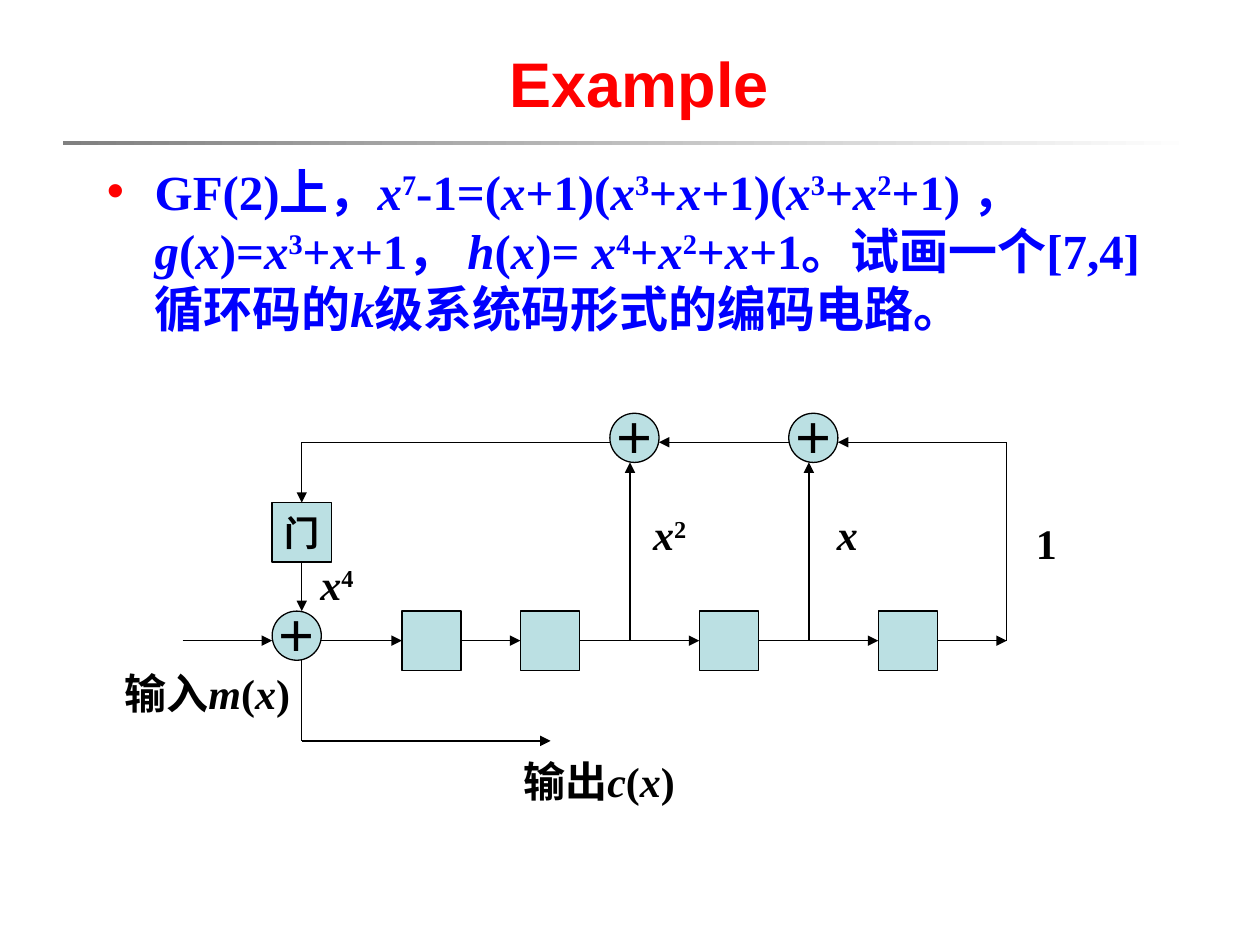
import dataclasses
import itertools

import lxml.etree
import pptx
import pptx.dml.color
import pptx.enum.shapes
import pptx.enum.text
import pptx.oxml.ns
import pptx.util

Inches = pptx.util.Inches
Pt = pptx.util.Pt
RGB = pptx.dml.color.RGBColor.from_string
qn = pptx.oxml.ns.qn
SHAPE = pptx.enum.shapes.MSO_SHAPE
ALIGN = pptx.enum.text.PP_ALIGN
ANCHOR = pptx.enum.text.MSO_ANCHOR
TOP, LEFT, BOTTOM, RIGHT = range(4)


@dataclasses.dataclass(frozen=True)
class Theme:
    accent: str = "FF0000"
    body: str = "0000FF"
    ink: str = "000000"
    block_fill: str = "BBE0E3"
    rule: tuple = ("808080", "FFFFFF")
    sans: str = "Arial"
    serif: str = "Times New Roman"
    title_size: int = 36
    body_size: int = 28
    label_size: int = 24
    gate_size: int = 20
    stroke: float = 0.75


def split_math(text):
    """Lower-case Latin letters are italic variables; ^ raises the next character."""
    marked = []
    for before, char in zip(" " + text, text):
        if char != "^":
            kind = "power" if before == "^" else "variable" if "a" <= char <= "z" else "plain"
            marked.append((kind, char))
    for kind, group in itertools.groupby(marked, key=lambda pair: pair[0]):
        yield kind, "".join(char for _, char in group)


class SlideBuilder:
    def __init__(self, slide, theme):
        self.slide, self.theme = slide, theme

    def style(self, font, size, color, face):
        font.size, font.bold, font.name = Pt(size), True, face
        font.color.rgb = RGB(color)

    def title(self, text, x, y, w, h):
        heading = self.slide.shapes.title
        heading.left, heading.top, heading.width, heading.height = map(Inches, (x, y, w, h))
        frame = heading.text_frame
        frame.text = text
        frame.vertical_anchor = ANCHOR.MIDDLE
        frame.paragraphs[0].alignment = ALIGN.CENTER
        self.style(frame.paragraphs[0].runs[0].font, self.theme.title_size,
                   self.theme.accent, self.theme.sans)

    def rule(self, x, y, w, h):
        bar = self.slide.shapes.add_shape(SHAPE.RECTANGLE, *map(Inches, (x, y, w, h)))
        bar.shadow.inherit = False
        bar.line.fill.background()
        bar.fill.gradient()
        bar.fill.gradient_angle = 0
        for stop, color, position in zip(bar.fill.gradient_stops, self.theme.rule, (0, 1)):
            stop.color.rgb, stop.position = RGB(color), position

    def math(self, paragraph, text, size, color):
        for kind, piece in split_math(text):
            run = paragraph.add_run()
            run.text = piece
            self.style(run.font, size, color, self.theme.serif)
            run.font.italic = kind == "variable"
            if kind == "power":
                run.font._element.set("baseline", "30000")

    def text_box(self, x, y, w, h):
        frame = self.slide.shapes.add_textbox(*map(Inches, (x, y, w, h))).text_frame
        frame.word_wrap = True
        return frame

    def bullet(self, text, x, y, w, h):
        paragraph = self.text_box(x, y, w, h).paragraphs[0]
        props = paragraph._p.get_or_add_pPr()
        props.set("marL", str(Inches(0.38)))
        props.set("indent", str(Inches(-0.38)))
        tint = lxml.etree.SubElement(props, qn("a:buClr"))
        lxml.etree.SubElement(tint, qn("a:srgbClr")).set("val", self.theme.accent)
        lxml.etree.SubElement(props, qn("a:buFont")).set("typeface", self.theme.sans)
        lxml.etree.SubElement(props, qn("a:buChar")).set("char", "•")
        self.math(paragraph, text, self.theme.body_size, self.theme.body)

    def label(self, text, x, y, w):
        frame = self.text_box(x, y, w, 0.5)
        frame.auto_size = pptx.enum.text.MSO_AUTO_SIZE.SHAPE_TO_FIT_TEXT
        frame.paragraphs[0].alignment = ALIGN.CENTER
        self.math(frame.paragraphs[0], text, self.theme.label_size, self.theme.ink)

    def block(self, kind, x, y, side, text="", size=0, face=""):
        block = self.slide.shapes.add_shape(kind, *map(Inches, (x, y, side, side)))
        block.shadow.inherit = False
        block.fill.solid()
        block.fill.fore_color.rgb = RGB(self.theme.block_fill)
        block.line.color.rgb = RGB(self.theme.ink)
        block.line.width = Pt(self.theme.stroke)
        if text:
            frame = block.text_frame
            frame.text = text
            frame.word_wrap = False
            frame.vertical_anchor = ANCHOR.MIDDLE
            frame.paragraphs[0].alignment = ALIGN.CENTER
            self.style(frame.paragraphs[0].runs[0].font, size, self.theme.ink, face)
        return block

    def adder(self, x, y, side):
        return self.block(SHAPE.OVAL, x, y, side, "＋", self.theme.label_size, self.theme.sans)

    def wire(self, start, end, arrow=True, source=None, target=None):
        """source and target are (rectangle, side) pairs to join."""
        wire = self.slide.shapes.add_connector(
            pptx.enum.shapes.MSO_CONNECTOR.STRAIGHT, *map(Inches, (*start, *end)))
        wire.line.color.rgb = RGB(self.theme.ink)
        wire.line.width = Pt(self.theme.stroke)
        if arrow:
            lxml.etree.SubElement(wire.line._get_or_add_ln(), qn("a:tailEnd")).set("type", "triangle")
        lxml.etree.SubElement(wire._element.spPr, qn("a:effectLst"))
        if source:
            wire.begin_connect(*source)
        if target:
            wire.end_connect(*target)


def main():
    deck = pptx.Presentation()
    deck.slide_width, deck.slide_height = Inches(10), Inches(7.5)
    theme = Theme()
    page = SlideBuilder(deck.slides.add_slide(deck.slide_layouts[5]), theme)

    # Heading and problem statement
    page.rule(0.5, 1.12, 9, 0.03)
    page.title("Example", 1.61, 0.28, 6.93, 0.75)
    page.bullet("GF(2)上，x^7-1=(x+1)(x^3+x+1)(x^3+x^2+1) ，g(x)=x^3+x+1， "
                "h(x)= x^4+x^2+x+1。试画一个[7,4]循环码的k级系统码形式的编码电路。",
                0.75, 1.23, 8.5, 5.59)

    # Circuit grid
    box, circle, pitch = 0.47, 0.39, 1.42
    row_top, adder_top, gate_top = 4.85, 3.28, 3.99
    row_y = row_top + box / 2
    feedback_y, output_y = 3.51, 5.88
    input_x, gate_x, end_x = 1.45, 2.16, 7.99
    loop_x = gate_x + box / 2
    register_xs = [3.19] + [4.13 + pitch * i for i in range(3)]
    adder_xs = [4.84 + pitch * i for i in range(2)]

    # Registers, gate and adders
    registers = [page.block(SHAPE.RECTANGLE, x, row_top, box) for x in register_xs]
    gate = page.block(SHAPE.RECTANGLE, gate_x, gate_top, box, "门", theme.gate_size, theme.serif)
    page.adder(gate_x, row_top, circle)
    for x in adder_xs:
        page.adder(x, adder_top, circle)

    # Shift row, from input to last register
    page.wire((input_x, row_y), (gate_x, row_y))
    page.wire((gate_x + circle, row_y), (register_xs[0], row_y), target=(registers[0], LEFT))
    for i in range(len(registers) - 1):
        page.wire((register_xs[i] + box, row_y), (register_xs[i + 1], row_y),
                  source=(registers[i], RIGHT), target=(registers[i + 1], LEFT))
    page.wire((register_xs[-1] + box, row_y), (end_x, row_y), source=(registers[-1], RIGHT))

    # Feedback loop and its taps
    page.wire((end_x, row_y), (end_x, feedback_y), arrow=False)
    stops = adder_xs + [end_x]
    for x, following in zip(adder_xs, stops[1:]):
        page.wire((following, feedback_y), (x + circle, feedback_y))
        page.wire((x + 0.16, row_y), (x + 0.16, adder_top + circle))
    page.wire((adder_xs[0], feedback_y), (loop_x, feedback_y), arrow=False)
    page.wire((loop_x, feedback_y), (loop_x, gate_top), target=(gate, TOP))
    page.wire((loop_x, gate_top + box), (loop_x, row_top), source=(gate, BOTTOM))

    # Output branch
    page.wire((loop_x, row_top + circle), (loop_x, output_y), arrow=False)
    page.wire((loop_x, output_y), (4.37, output_y))

    # Labels
    for text, x, y, w in (("输入m(x)", 0.86, 5.25, 1.57), ("输出c(x)", 3.97, 5.95, 1.57),
                          ("1", 8.07, 4.06, 0.47), ("x", 6.49, 3.99, 0.47),
                          ("x^4", 2.4, 4.38, 0.55), ("x^2", 5, 3.99, 0.63)):
        page.label(text, x, y, w)

    deck.save("out.pptx")


if __name__ == "__main__":
    main()
